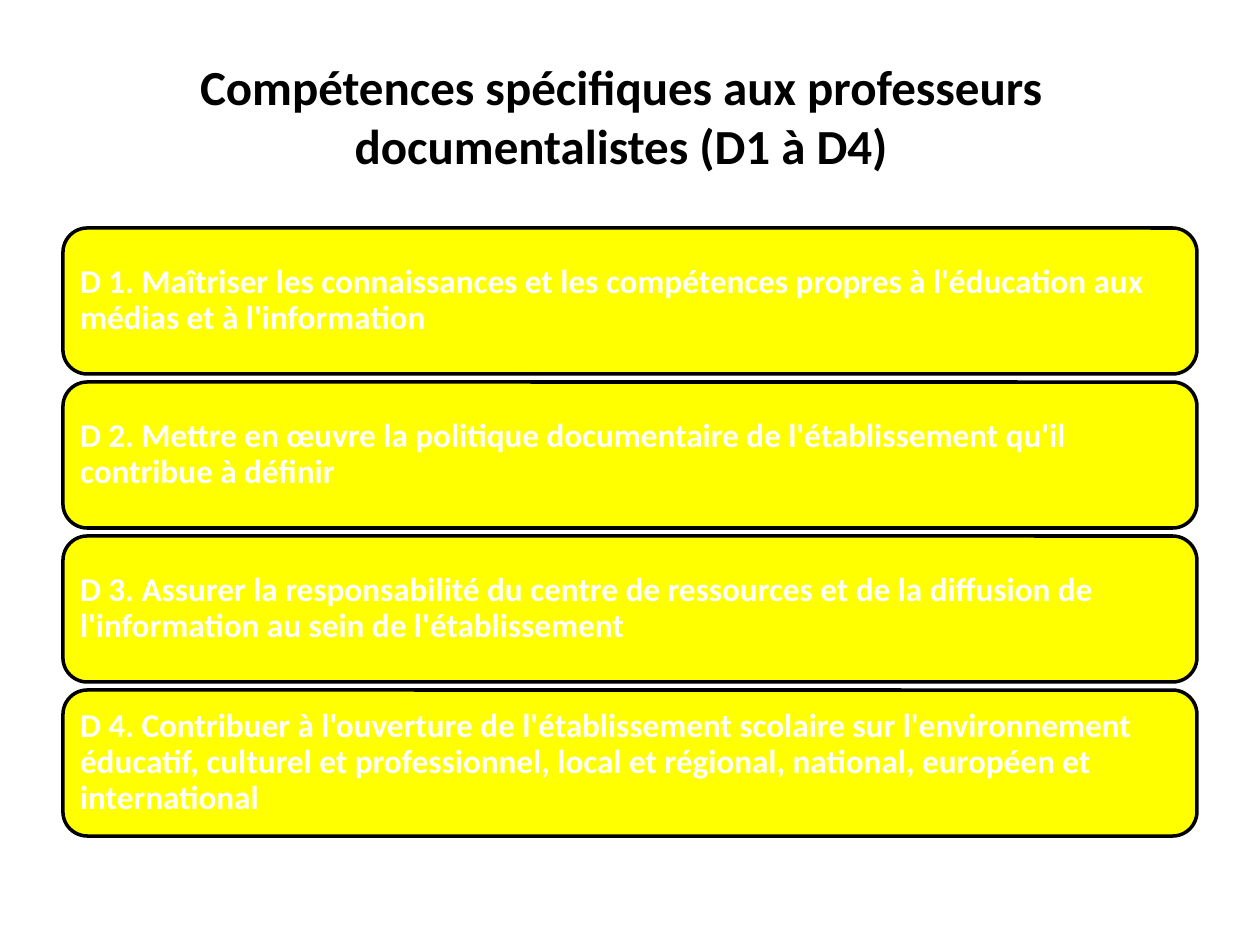
from pptx import Presentation
from pptx.dml.color import RGBColor
from pptx.enum.shapes import MSO_SHAPE as Shape
from pptx.enum.text import MSO_ANCHOR as Anchor, MSO_AUTO_SIZE as AutoSize, PP_ALIGN as Align
from pptx.util import Emu, Pt

PX_PER_INCH = 126
FONT = "Calibri"
TITLE = "Compétences spécifiques aux professeurs documentalistes (D1 à D4)"
SKILLS = [
    "D 1. Maîtriser les connaissances et les compétences propres à l'éducation aux médias et à l'information",
    "D 2. Mettre en œuvre la politique documentaire de l'établissement qu'il contribue à définir",
    "D 3. Assurer la responsabilité du centre de ressources et de la diffusion de l'information au sein de l'établissement",
    "D 4. Contribuer à l'ouverture de l'établissement scolaire sur l'environnement éducatif, culturel et professionnel, local et régional, national, européen et international",
]


def px(length):
    return Emu(round(length * 914400 / PX_PER_INCH))


def color(hex_value):
    return RGBColor.from_string(hex_value)


def add_run(paragraph, text, size, hex_value):
    run = paragraph.add_run()
    run.text = text
    run.font.name = FONT
    run.font.size = Pt(size)
    run.font.bold = True
    run.font.color.rgb = color(hex_value)


def place_title(slide, left, top, width, height):
    title = slide.shapes.title
    title.left, title.top = px(left), px(top)
    title.width, title.height = px(width), px(height)
    frame = title.text_frame
    frame.word_wrap = True
    frame.auto_size = AutoSize.NONE
    frame.vertical_anchor = Anchor.MIDDLE
    heading = frame.paragraphs[0]
    heading.alignment = Align.CENTER
    add_run(heading, TITLE, 28, "000000")


def add_skill(group, text, left, top, width, height):
    skill = group.shapes.add_shape(Shape.ROUNDED_RECTANGLE, px(left), px(top), px(width), px(height))
    skill.shadow.inherit = False
    skill.fill.solid()
    skill.fill.fore_color.rgb = color("FFFF00")
    skill.line.color.rgb = color("000000")
    skill.line.width = Pt(2)
    frame = skill.text_frame
    frame.word_wrap = True
    frame.vertical_anchor = Anchor.MIDDLE
    frame.margin_left = frame.margin_right = px(10)
    frame.margin_top = frame.margin_bottom = px(10)
    wording = frame.paragraphs[0]
    wording.alignment = Align.LEFT
    wording.line_spacing = 0.9
    add_run(wording, text, 19, "FFFFFF")


def add_skill_list(slide, left, top, width, height, gap):
    group = slide.shapes.add_group_shape()
    skill_height = (height - gap * (len(SKILLS) - 1)) / len(SKILLS)
    for index, text in enumerate(SKILLS):
        add_skill(group, text, left, top + index * (skill_height + gap), width, skill_height)


def main():
    deck = Presentation()
    deck.slide_width, deck.slide_height = px(1260), px(945)
    slide = deck.slides.add_slide(deck.slide_layouts[5])
    place_title(slide, 54, 37, 1134, 157)
    add_skill_list(slide, 63, 228, 1134, 608, 8)
    deck.save("out.pptx")


if __name__ == "__main__":
    main()
